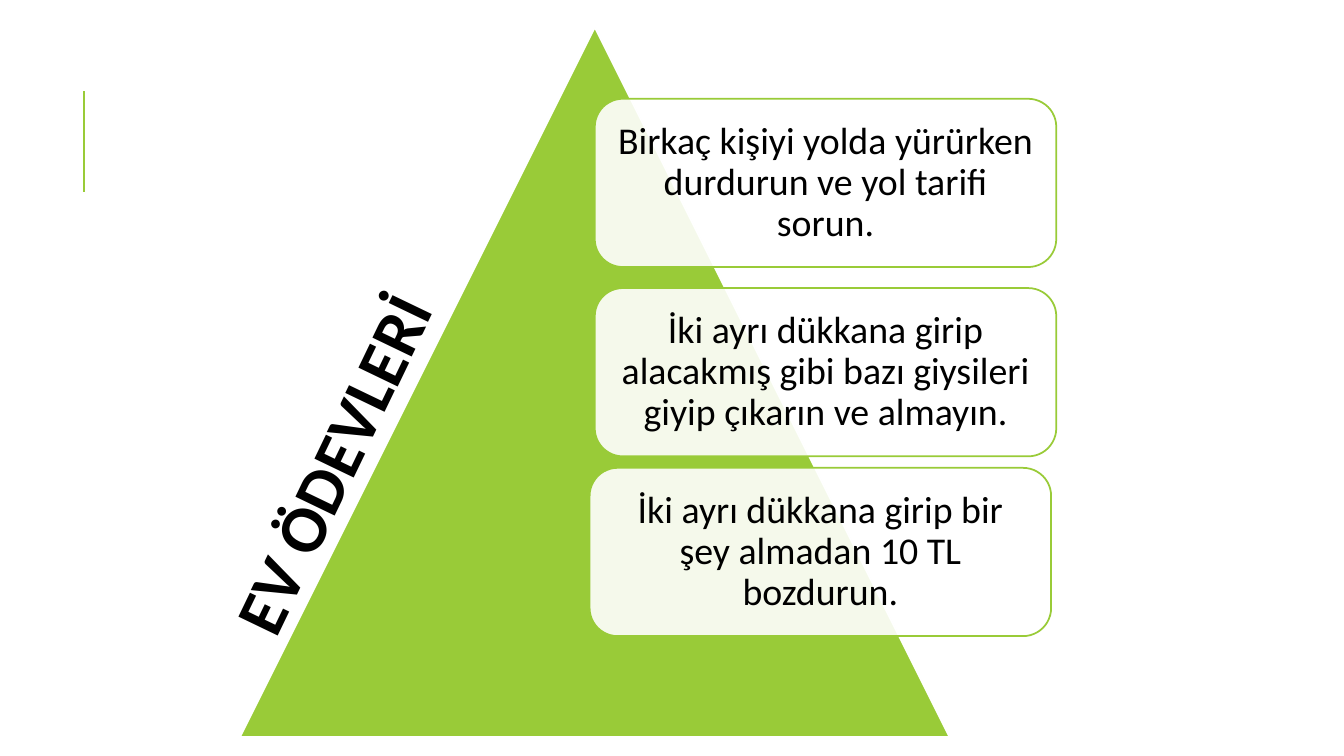
from lxml.etree import SubElement
from pptx import Presentation
from pptx.dml.color import RGBColor
from pptx.enum.shapes import MSO_CONNECTOR as Link, MSO_SHAPE as Preset
from pptx.enum.text import MSO_ANCHOR as Anchor, PP_ALIGN as Align
from pptx.oxml.ns import qn
from pptx.util import Cm, Pt

COLORS = {"green": "99CB38", "white": "FFFFFF", "black": "000000"}
TASKS = [
    ("Birkaç kişiyi yolda yürürken durdurun ve yol tarifi sorun.", 8.94, 1.8),
    ("İki ayrı dükkana girip alacakmış gibi bazı giysileri giyip çıkarın ve almayın.", 8.94, 6.57),
    ("İki ayrı dükkana girip bir şey almadan 10 TL bozdurun.", 8.81, 11.1),
]
CARD_SIZE = (11.63, 4.24)
TASK_FONT = {"name": "Calibri", "size": Pt(27), "bold": False}
HEADING_FONT = {"name": "Calibri", "size": Pt(48), "bold": True}
CARD_FRAME = {
    "word_wrap": True, "vertical_anchor": Anchor.MIDDLE,
    "margin_left": Cm(0.28), "margin_right": Cm(0.28),
    "margin_top": Cm(0.28), "margin_bottom": Cm(0.28),
}
HEADING_FRAME = {"word_wrap": True, "vertical_anchor": Anchor.TOP}


def apply(target, values):
    for key, value in values.items():
        setattr(target, key, value)


def rgb(color):
    return RGBColor.from_string(COLORS[color])


def write(frame, words, frame_format, font_format, spacing=1.0):
    apply(frame, frame_format)
    paragraph = frame.paragraphs[0]
    apply(paragraph, {"alignment": Align.CENTER, "line_spacing": spacing})
    run = paragraph.add_run()
    run.text = words
    apply(run.font, font_format)
    run.font.color.rgb = rgb("black")


def add_panel(slide, preset, box, fill, outline):
    panel = slide.shapes.add_shape(preset, *map(Cm, box))
    panel.shadow.inherit = False
    panel.fill.solid()
    panel.fill.fore_color.rgb = rgb(fill)
    panel.line.color.rgb = rgb(outline)
    panel.line.width = Pt(1.25)
    return panel


def add_accent(slide, x, top, height):
    accent = slide.shapes.add_connector(
        Link.STRAIGHT, Cm(x), Cm(top + height), Cm(x), Cm(top))
    accent.line.color.rgb = rgb("green")
    accent.line.width = Pt(1.5)
    SubElement(accent._element.spPr, qn("a:effectLst"))


def add_task(slide, box, words):
    card = add_panel(slide, Preset.ROUNDED_RECTANGLE, box, "white", "green")
    tint = card._element.spPr.find(qn("a:solidFill"))[0]
    SubElement(tint, qn("a:alpha"), val="90000")
    write(card.text_frame, words, CARD_FRAME, TASK_FONT, 0.9)


def add_pyramid(slide, left, top, side):
    add_panel(slide, Preset.ISOSCELES_TRIANGLE, (left, top, side, side), "green", "white")
    for words, across, down in TASKS:
        add_task(slide, (left + across, top + down, *CARD_SIZE), words)


def add_heading(slide, box, words):
    heading = slide.shapes.add_textbox(*map(Cm, box))
    heading.rotation = 295.7
    write(heading.text_frame, words, HEADING_FRAME, HEADING_FONT)


def main():
    deck = Presentation()
    apply(deck, {"slide_width": Cm(33.87), "slide_height": Cm(19.05)})
    homework = deck.slides.add_slide(deck.slide_layouts[6])
    add_accent(homework, 2.11, 2.29, 2.54)
    add_pyramid(homework, 6.05, 0.69, 17.88)
    add_heading(homework, (2.77, 10.52, 11.18, 2.31), "EV ÖDEVLERİ")
    deck.save("out.pptx")


if __name__ == "__main__":
    main()
